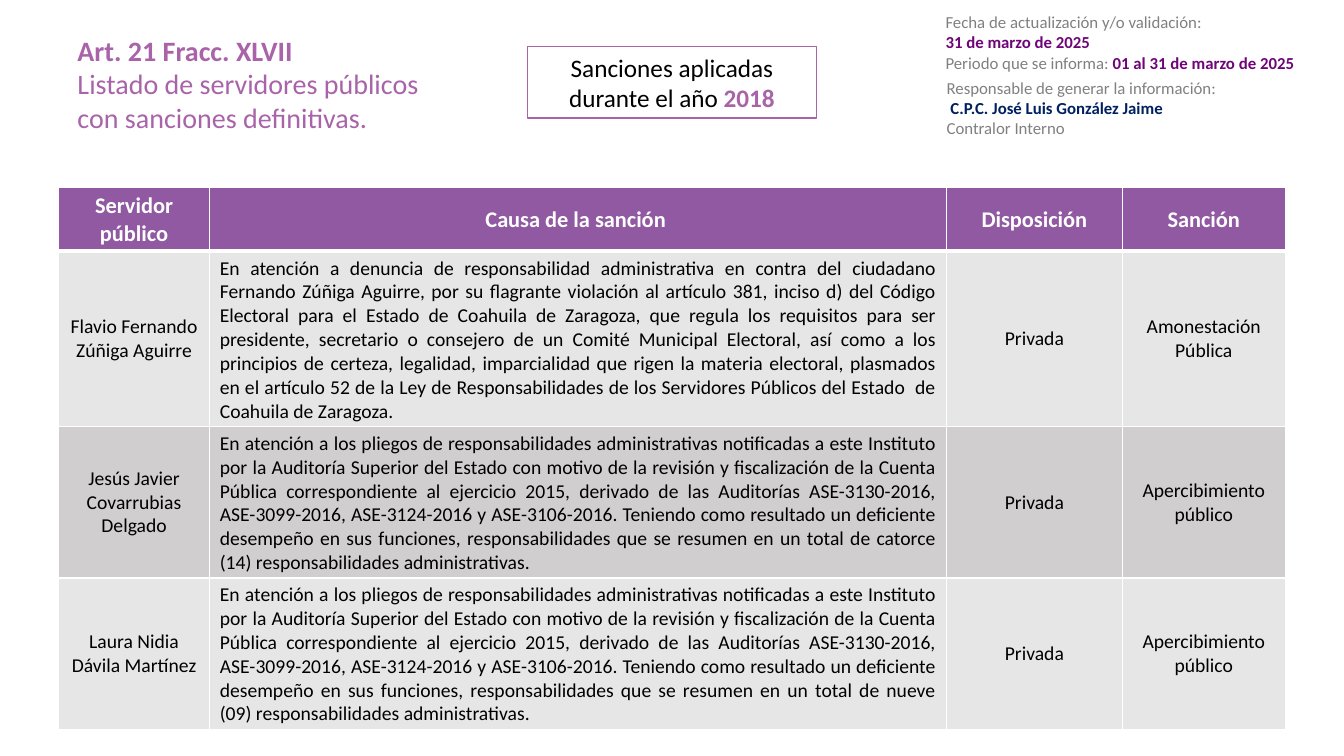
from lxml import etree
from pptx import Presentation
from pptx.dml.color import RGBColor
from pptx.enum.shapes import MSO_SHAPE
from pptx.enum.text import MSO_ANCHOR, MSO_AUTO_SIZE, PP_ALIGN
from pptx.oxml.ns import qn
from pptx.util import Inches, Pt

RECTANGLE = MSO_SHAPE.RECTANGLE
MIDDLE = MSO_ANCHOR.MIDDLE
FIT = MSO_AUTO_SIZE.SHAPE_TO_FIT_TEXT
LEFT, CENTER, JUSTIFY = PP_ALIGN.LEFT, PP_ALIGN.CENTER, PP_ALIGN.JUSTIFY

COLORS = {
    "white": "FFFFFF",
    "black": "000000",
    "orchid": "A963A9",
    "header": "9059A1",
    "light": "E7E6E6",
    "dark": "D0CECE",
    "gray": "808080",
    "plum": "6F0579",
    "navy": "002060",
}

HEADINGS = ["Servidor público", "Causa de la sanción ", "Disposición", "Sanción"]
COLUMN_WIDTHS = [1.5, 7.31, 1.74, 1.62]
ROW_HEIGHTS = [0.63, 1.74, 1.5, 1.5]

COMPLAINT = (
    "En atención a denuncia de responsabilidad administrativa en contra del ciudadano "
    "Fernando Zúñiga Aguirre, por su flagrante violación al artículo 381, inciso d) del "
    "Código Electoral para el Estado de Coahuila de Zaragoza, que regula los requisitos "
    "para ser presidente, secretario o consejero de un Comité Municipal Electoral, así como "
    "a los principios de certeza, legalidad, imparcialidad que rigen la materia electoral, "
    "plasmados en el artículo 52 de la Ley de Responsabilidades de los Servidores Públicos "
    "del Estado  de Coahuila de Zaragoza."
)
AUDIT = (
    "En atención a los pliegos de responsabilidades administrativas notificadas a este "
    "Instituto por la Auditoría Superior del Estado con motivo de la revisión y "
    "fiscalización de la Cuenta Pública correspondiente al ejercicio 2015, derivado de las "
    "Auditorías ASE-3130-2016, ASE-3099-2016, ASE-3124-2016 y ASE-3106-2016. Teniendo como "
    "resultado un deficiente desempeño en sus funciones, responsabilidades que se resumen "
    "en un total de {} responsabilidades administrativas."
)
SANCTIONS = [
    ["Flavio Fernando Zúñiga Aguirre", COMPLAINT, "Privada", "Amonestación Pública"],
    ["Jesús Javier Covarrubias Delgado", AUDIT.format("catorce (14)"), "Privada",
     "Apercibimiento público"],
    ["Laura Nidia Dávila Martínez", AUDIT.format("nueve (09)"), "Privada",
     "Apercibimiento público"],
]


class SlideBuilder:
    """Holds the slide being built and its common style."""

    font = "Calibri"

    def __init__(self, slide):
        self.slide = slide

    def color(self, name):
        return RGBColor.from_string(COLORS[name])

    def fill_text(self, frame, paragraphs, size, align=LEFT):
        """Fill a text frame; each paragraph is a list of (text, color, bold)."""
        frame.word_wrap = True
        for index, runs in enumerate(paragraphs):
            paragraph = frame.paragraphs[0] if index == 0 else frame.add_paragraph()
            paragraph.alignment = align
            for text, color, bold in runs:
                run = paragraph.add_run()
                run.text = text
                run.font.name = self.font
                run.font.size = Pt(size)
                run.font.bold = bold
                run.font.color.rgb = self.color(color)

    def text(self, left, top, width, height, paragraphs, size, wrap=True):
        box = self.slide.shapes.add_textbox(
            Inches(left), Inches(top), Inches(width), Inches(height))
        self.fill_text(box.text_frame, paragraphs, size)
        box.text_frame.word_wrap = wrap
        box.text_frame.auto_size = FIT

    def framed_text(self, left, top, width, height, paragraphs, size):
        frame = self.slide.shapes.add_shape(
            RECTANGLE, Inches(left), Inches(top), Inches(width), Inches(height))
        frame.shadow.inherit = False
        frame.fill.solid()
        frame.fill.fore_color.rgb = self.color("white")
        frame.line.color.rgb = self.color("orchid")
        frame.line.width = Pt(1)
        self.fill_text(frame.text_frame, paragraphs, size, CENTER)
        frame.text_frame.auto_size = FIT

    def borders(self, cell, bottom):
        """Draw white cell borders, with the bottom one of the given points."""
        properties = cell._tc.get_or_add_tcPr()
        widths = {"a:lnL": 1, "a:lnR": 1, "a:lnT": 1, "a:lnB": bottom}
        for position, (side, width) in enumerate(widths.items()):
            line = etree.Element(qn(side), w=str(Pt(width)))
            fill = etree.SubElement(line, qn("a:solidFill"))
            etree.SubElement(fill, qn("a:srgbClr"), val=COLORS["white"])
            properties.insert(position, line)

    def cell(self, cell, text, fill, color, size, bold, align, bottom):
        cell.fill.solid()
        cell.fill.fore_color.rgb = self.color(fill)
        cell.vertical_anchor = MIDDLE
        self.fill_text(cell.text_frame, [[(text, color, bold)]], size, align)
        self.borders(cell, bottom)

    def table(self, left, top, widths, heights, headings, records):
        table = self.slide.shapes.add_table(
            len(heights), len(widths), Inches(left), Inches(top),
            Inches(sum(widths)), Inches(sum(heights))).table
        for column, width in zip(table.columns, widths):
            column.width = Inches(width)
        for row, height in zip(table.rows, heights):
            row.height = Inches(height)
        for column, heading in enumerate(headings):
            self.cell(table.cell(0, column), heading, "header", "white", 16, True, CENTER, 3)
        for row, record in enumerate(records, 1):
            fill = "light" if row % 2 else "dark"
            for column, value in enumerate(record):
                align = JUSTIFY if column == 1 else CENTER
                self.cell(table.cell(row, column), value, fill, "black", 14, False, align, 1)


def main():
    presentation = Presentation()
    presentation.slide_width = Inches(13.33)
    presentation.slide_height = Inches(7.5)
    builder = SlideBuilder(presentation.slides.add_slide(presentation.slide_layouts[6]))

    builder.text(0.67, 0.28, 3.85, 1.45, [
        [("Art. 21 Fracc. XLVII", "orchid", True)],
        [("Listado de servidores públicos con sanciones definitivas.", "orchid", False)],
    ], 20)
    builder.table(0.58, 1.86, COLUMN_WIDTHS, ROW_HEIGHTS, HEADINGS, SANCTIONS)
    builder.framed_text(5.23, 0.46, 2.87, 0.71, [
        [("Sanciones aplicadas durante el año ", "black", False), ("2018", "orchid", True)],
    ], 18)
    builder.text(9.28, 0.07, 3.83, 0.71, [
        [("Fecha de actualización y/o validación:", "gray", False)],
        [("31 de marzo de 2025", "plum", True)],
        [("Periodo que se informa: ", "gray", False),
         ("01 al 31 de marzo de 2025", "plum", True)],
    ], 12, wrap=False)
    builder.text(9.29, 0.72, 3.11, 1.54, [
        [("Responsable de generar la información:", "gray", False)],
        [(" ", "gray", False), ("C.P.C. José Luis González Jaime", "navy", True)],
        [("Contralor Interno", "gray", False)],
    ], 12)

    presentation.save("out.pptx")


if __name__ == "__main__":
    main()
